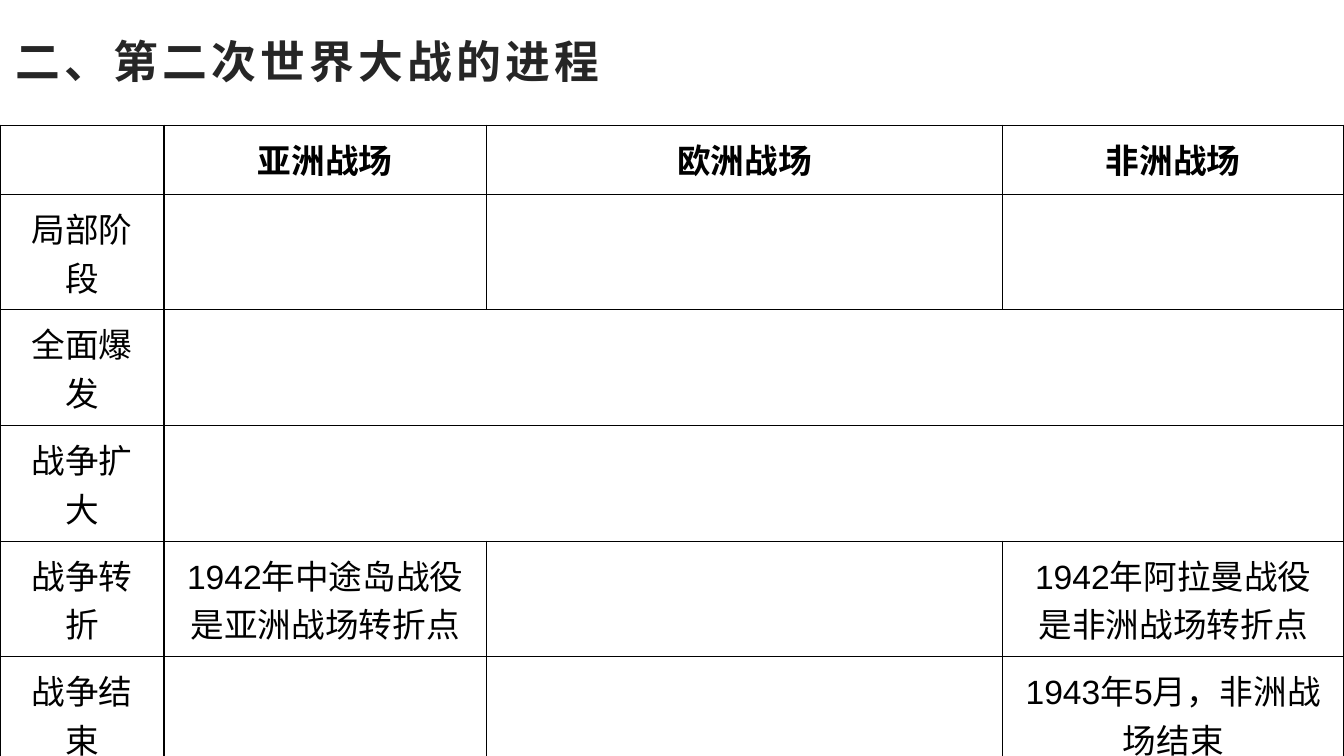
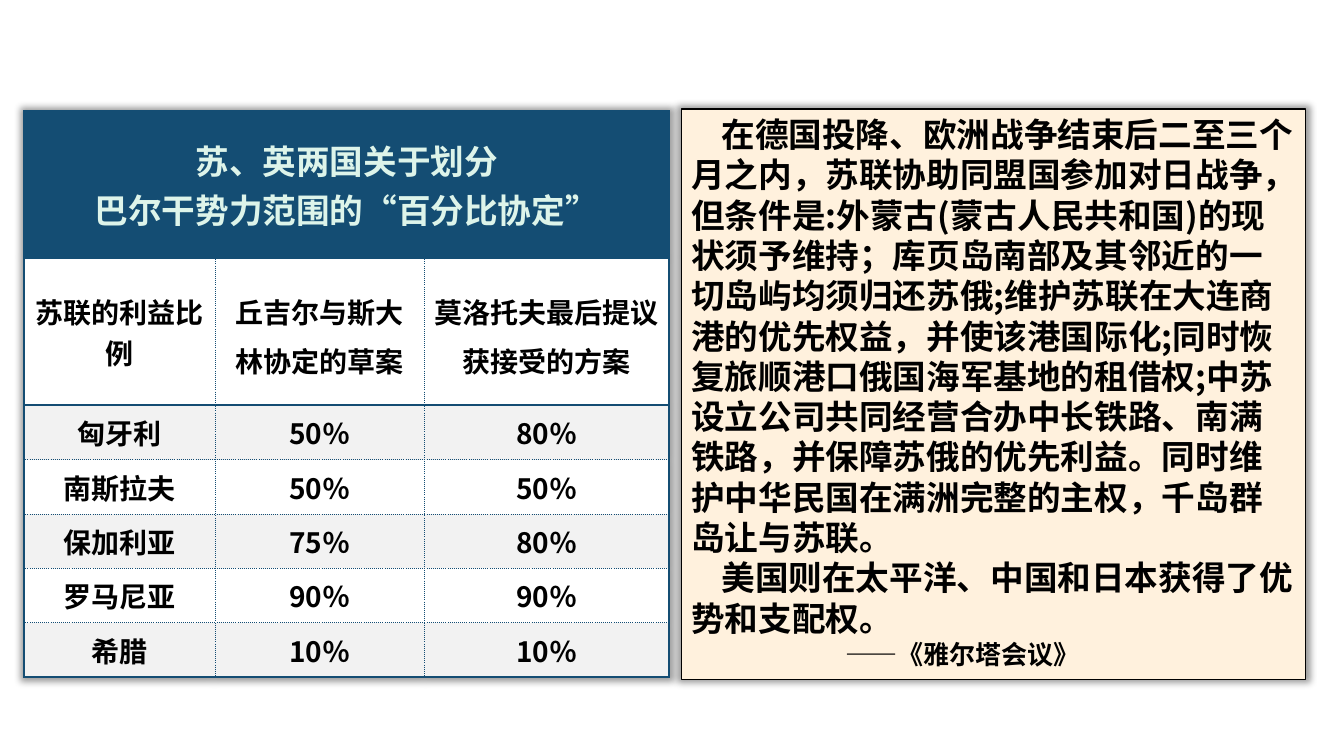
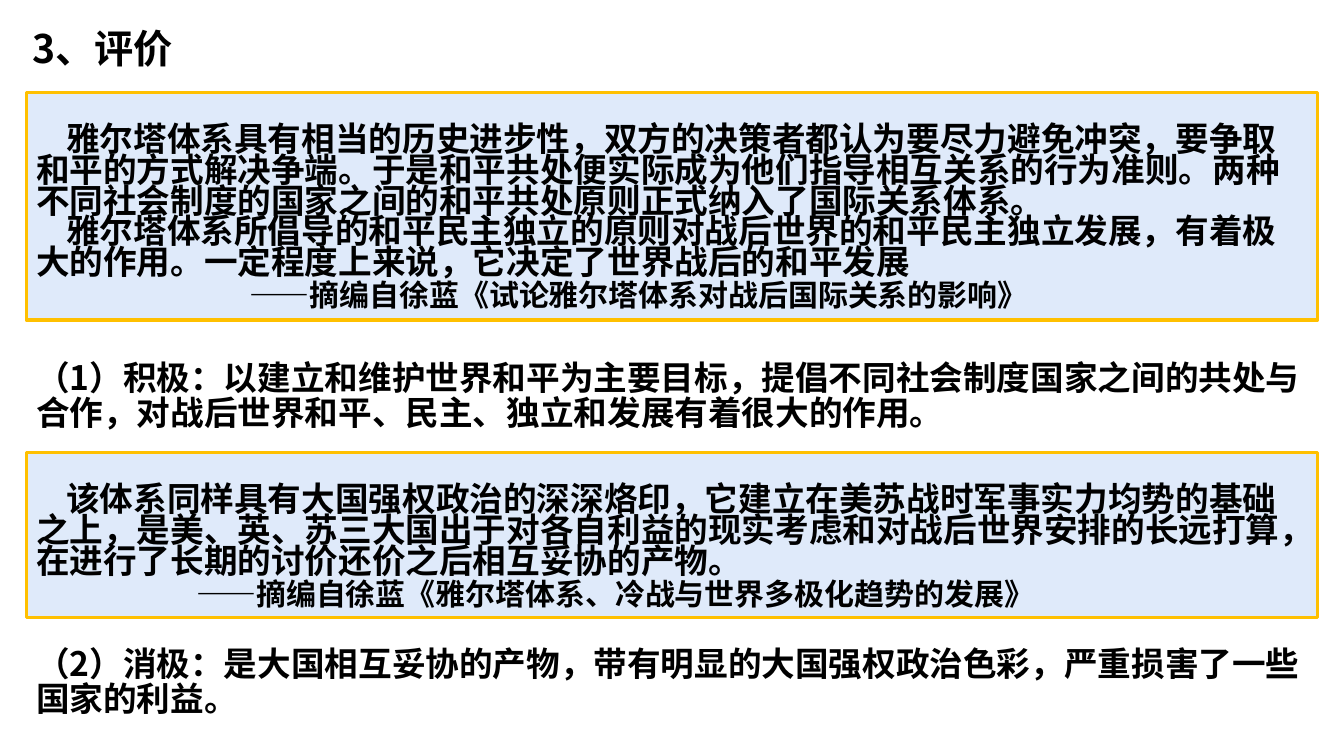
from lxml import etree
from pptx import Presentation
from pptx.dml.color import RGBColor
from pptx.enum.shapes import MSO_SHAPE
from pptx.enum.text import MSO_ANCHOR, PP_ALIGN
from pptx.oxml.ns import qn
from pptx.util import Inches, Pt

RECTANGLE = MSO_SHAPE.RECTANGLE
TOP, MIDDLE = MSO_ANCHOR.TOP, MSO_ANCHOR.MIDDLE
LEFT, CENTER = PP_ALIGN.LEFT, PP_ALIGN.CENTER

COLORS = {
    "black": "000000", "title": "262626", "white": "FFFFFF", "stripe": "F2F2F2",
    "navy": "144D73", "mint": "DDF4EA", "cream": "FFF1DD",
    "sky": "DFEAFA", "gold": "FFC000",
}
HAN, LATIN = "Noto Sans CJK SC", "Arial"

deck = Presentation()
deck.slide_width, deck.slide_height = Inches(13.33), Inches(7.5)
# One hundredth of the slide's width and height
COL, ROW = deck.slide_width / 100, deck.slide_height / 100
process, agreements, assessment = [
    deck.slides.add_slide(deck.slide_layouts[6]) for _ in range(3)]


def write(frame, lines, color="black", face=HAN, bold=True, align=LEFT,
          spacing=None, after=0, tracking=0):
    """Fill a frame with (text, size, first-line indent in inches) lines."""
    frame.word_wrap = True
    for number, (text, size, indent) in enumerate(lines):
        paragraph = frame.add_paragraph() if number else frame.paragraphs[0]
        paragraph.text = text
        paragraph.alignment = align
        paragraph.space_after = Pt(after)
        if spacing:
            paragraph.line_spacing = spacing
        font = paragraph.font
        font.size, font.bold, font.name = Pt(size), bold, face
        font.color.rgb = RGBColor.from_string(COLORS[color])
        properties = paragraph._p.get_or_add_pPr()
        properties.set("indent", str(Inches(indent)))
        defaults = properties.find(qn("a:defRPr"))
        defaults.set("spc", str(tracking * 100))
        etree.SubElement(defaults, qn("a:ea")).set("typeface", HAN)


def draw_borders(cell, color, widths):
    """Set left, right, top and bottom borders; hairlines are dotted."""
    properties = cell._tc.get_or_add_tcPr()
    for position, (side, width) in enumerate(zip("LRTB", widths)):
        border = etree.Element(qn(f"a:ln{side}"), w=str(Pt(width)))
        fill = etree.SubElement(border, qn("a:solidFill"))
        etree.SubElement(fill, qn("a:srgbClr")).set("val", COLORS[color])
        dash = etree.SubElement(border, qn("a:prstDash"))
        dash.set("val", "solid" if width >= 1 else "dot")
        properties.insert(position, border)


# Tables: slide, left, top, column shares, row shares, cell texts, merged rows
theatres = [
    ["", "亚洲战场", "欧洲战场", "非洲战场"],
    ["局部阶段", "", "", ""],
    ["全面爆发", "", "", ""],
    ["战争扩大", "", "", ""],
    ["战争转折", "1942年中途岛战役是亚洲战场转折点", "",
     "1942年阿拉曼战役是非洲战场转折点"],
    ["战争结束", "", "", "1943年5月，非洲战场结束"],
]
percentages = [
    ["苏、英两国关于划分\n巴尔干势力范围的“百分比协定”", "", ""],
    ["苏联的利益比例", "丘吉尔与斯大林协定的草案", "莫洛托夫最后提议获接受的方案"],
    ["匈牙利", "50％", "80％"],
    ["南斯拉夫", "50％", "50％"],
    ["保加利亚", "75％", "80％"],
    ["罗马尼亚", "90％", "90％"],
    ["希腊", "10％", "10％"],
]
grids = []
for slide, left, top, widths, heights, texts, merges in [
    (process, 0, 16.57, [12.2, 24, 38.4, 25.4],
     [9.13, 11.73, 12.53, 15.07, 14.53, 12.27], theatres, [(2, 1, 3), (3, 1, 3)]),
    (agreements, 1.8, 14.67, [14.22, 15.53, 18.25],
     [19.47] * 2 + [7.19] * 5, percentages, [(0, 0, 2)]),
]:
    grid = slide.shapes.add_table(
        len(heights), len(widths), int(left * COL), int(top * ROW),
        int(sum(widths) * COL), int(sum(heights) * ROW)).table
    grid.first_row = grid.horz_banding = False
    for column, width in zip(grid.columns, widths):
        column.width = int(width * COL)
    for row, height in zip(grid.rows, heights):
        row.height = int(height * ROW)
    for r, first, last in merges:
        grid.cell(r, first).merge(grid.cell(r, last))
    grids.append(grid)
theatre_grid, percentage_grid = grids

for r, row in enumerate(theatres):
    for c, text in enumerate(row):
        cell = theatre_grid.cell(r, c)
        cell.fill.background()
        cell.margin_left = cell.margin_right = Inches(0.18)
        cell.margin_top = cell.margin_bottom = Inches(0.09)
        draw_borders(cell, "black", [1] * 4)
        if text:
            write(cell.text_frame, [(text, 24, 0)], face=LATIN, bold=r == 0,
                  align=CENTER)

THICK, HAIR = 1.5, 0.25
last_row, last_column = len(percentages) - 1, len(percentages[0]) - 1
for r, row in enumerate(percentages):
    for c, text in enumerate(row):
        cell = percentage_grid.cell(r, c)
        fill = "navy" if r == 0 else "white" if r % 2 else "stripe"
        cell.fill.solid()
        cell.fill.fore_color.rgb = RGBColor.from_string(COLORS[fill])
        cell.vertical_anchor = MIDDLE
        cell.margin_left = cell.margin_right = Inches(0.1 if r < 2 else 0.03)
        cell.margin_top = cell.margin_bottom = Inches(0.05 if r < 2 else 0)
        thick_sides = [c == 0 or r == 0, c == last_column or r == 0,
                       r <= 2, r <= 1 or r == last_row]
        draw_borders(cell, "navy", [THICK if side else HAIR for side in thick_sides])
        if text:
            write(cell.text_frame,
                  [(line, 20 if r else 24, 0) for line in text.split("\n")],
                  color="black" if r else "mint", align=CENTER,
                  spacing=1.2 if r == 1 and c else None)

# Text blocks: slide, box in shares, (fill, line, line width), insets, anchor,
# lines, text style
quote_box = ("sky", "gold", 2.25)
quote_insets = (0.1, 0.35, 0.1, 0.05)
quote_style = {"spacing": Pt(22)}
point_insets = (0.1, 0.05, 0.1, 0.05)
point_style = {"spacing": Pt(25), "after": 9}
blocks = [
    (process, (0.6, 4.47, 56.4, 7.07), None, (0.07, 0.04, 0.07, 0.04), MIDDLE,
     [("二、第二次世界大战的进程", 32, 0)], {"color": "title", "tracking": 3}),
    (agreements, (50.7, 14.4, 46.43, 75.47), ("cream", "black", 1),
     point_insets, TOP, [
         ("在德国投降、欧洲战争结束后二至三个月之内，苏联协助同盟国参加对日战争，"
          "但条件是:外蒙古(蒙古人民共和国)的现状须予维持；库页岛南部及其邻近的"
          "一切岛屿均须归还苏俄;维护苏联在大连商港的优先权益，并使该港国际化;同时"
          "恢复旅顺港口俄国海军基地的租借权;中苏设立公司共同经营合办中长铁路、南"
          "满铁路，并保障苏俄的优先利益。同时维护中华民国在满洲完整的主权，千岛"
          "群岛让与苏联。", 24, 0.3),
         ("美国则在太平洋、中国和日本获得了优势和支配权。", 24, 0.3),
         ("——《雅尔塔会议》", 18.6, 1.53)], {}),
    (assessment, (0.15, 2.27, 45.68, 8), None, (0.13, 0.07, 0.13, 0.07), TOP,
     [("3、评价", 28, 0.17)], {}),
    (assessment, (1.95, 12.2, 96.1, 30.13), quote_box, quote_insets, TOP, [
        ("雅尔塔体系具有相当的历史进步性，双方的决策者都认为要尽力避免冲突，要争取"
         "和平的方式解决争端。于是和平共处便实际成为他们指导相互关系的行为准则。两种"
         "不同社会制度的国家之间的和平共处原则正式纳入了国际关系体系。", 24, 0.3),
        ("雅尔塔体系所倡导的和平民主独立的原则对战后世界的和平民主独立发展，有着极"
         "大的作用。一定程度上来说，它决定了世界战后的和平发展", 24, 0.3),
        ("——摘编自徐蓝《试论雅尔塔体系对战后国际关系的影响》", 21.4, 2.12)],
     quote_style),
    (assessment, (1.95, 47.2, 96.1, 10.67), None, point_insets, TOP,
     [("（1）积极：以建立和维护世界和平为主要目标，提倡不同社会制度国家之间的共处"
       "与合作，对战后世界和平、民主、独立和发展有着很大的作用。", 24, 0)], point_style),
    (assessment, (1.95, 59.87, 96.1, 21.87), quote_box, quote_insets, TOP, [
        ("该体系同样具有大国强权政治的深深烙印，它建立在美苏战时军事实力均势的基础"
         "之上，是美、英、苏三大国出于对各自利益的现实考虑和对战后世界安排的长远打算，"
         "在进行了长期的讨价还价之后相互妥协的产物。", 24, 0.3),
        ("——摘编自徐蓝《雅尔塔体系、冷战与世界多极化趋势的发展》", 21.4, 1.59)],
     quote_style),
    (assessment, (1.95, 85.07, 96.1, 10.67), None, point_insets, TOP,
     [("（2）消极：是大国相互妥协的产物，带有明显的大国强权政治色彩，严重损害了一"
       "些国家的利益。", 24, 0)], point_style),
]
for slide, (left, top, width, height), look, insets, anchor, lines, style in blocks:
    box = [int(left * COL), int(top * ROW), int(width * COL), int(height * ROW)]
    if look:
        fill, line, line_width = look
        block = slide.shapes.add_shape(RECTANGLE, *box)
        block.shadow.inherit = False
        block.fill.solid()
        block.fill.fore_color.rgb = RGBColor.from_string(COLORS[fill])
        block.line.color.rgb = RGBColor.from_string(COLORS[line])
        block.line.width = Pt(line_width)
        if slide is agreements:
            treaty = block
    else:
        block = slide.shapes.add_textbox(*box)
    frame = block.text_frame
    frame.vertical_anchor = anchor
    (frame.margin_left, frame.margin_top,
     frame.margin_right, frame.margin_bottom) = map(Inches, insets)
    write(frame, lines, **style)

# The percentage table and the treaty text share a soft glow-like shadow
table_effects = etree.Element(qn("a:effectLst"))
percentage_grid._tbl.tblPr.insert(0, table_effects)
for effects in (table_effects, treaty._element.spPr.find(qn("a:effectLst"))):
    shadow = etree.SubElement(effects, qn("a:outerShdw"), blurRad=str(Pt(5)),
                              dist="0", dir="0", sx="101000", sy="101000",
                              algn="ctr", rotWithShape="0")
    tint = etree.SubElement(shadow, qn("a:srgbClr"), val=COLORS["black"])
    etree.SubElement(tint, qn("a:alpha"), val="40000")

deck.save("out.pptx")
